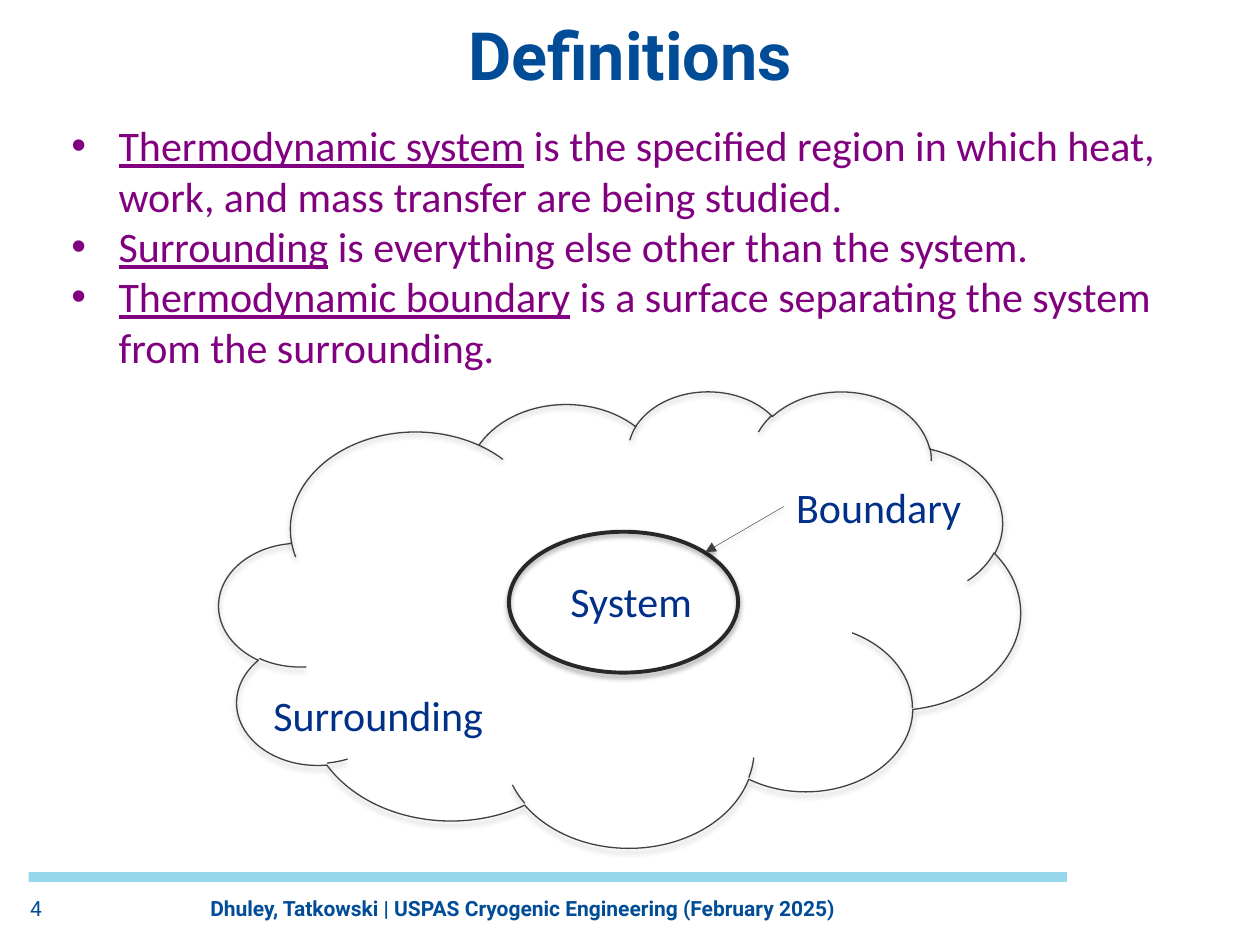
import pptx
import pptx.util
import pptx.oxml
import pptx.oxml.ns
import pptx.dml.color
import pptx.enum.text
import pptx.enum.shapes

Cm = pptx.util.Cm
Pt = pptx.util.Pt
kinds = pptx.enum.shapes.MSO_SHAPE
sides = pptx.enum.text.PP_ALIGN
rests = pptx.enum.text.MSO_ANCHOR
space = pptx.oxml.ns.nsdecls("a")


def hue(code):
    return pptx.dml.color.RGBColor.from_string(code)


def text(box, paras, font="Calibri", size=24, color="003087", bold=False,
         side=sides.LEFT, rest=rests.TOP, inset=True, wrap=True, dots=False):
    """Add a text box; each paragraph is a list of (words, underlined) runs."""
    frame = slide.shapes.add_textbox(*[Cm(n) for n in box]).text_frame
    frame.word_wrap = wrap
    frame.vertical_anchor = rest
    if not inset:
        frame.margin_left = frame.margin_right = 0
        frame.margin_top = frame.margin_bottom = 0
    for i, runs in enumerate(paras):
        para = frame.add_paragraph() if i else frame.paragraphs[0]
        para.alignment = side
        if dots:
            props = para._p.get_or_add_pPr()
            props.set("marL", str(Cm(0.95)))
            props.set("indent", str(-Cm(0.95)))
            props.append(pptx.oxml.parse_xml(f'<a:buFont {space} typeface="Arial"/>'))
            props.append(pptx.oxml.parse_xml(f'<a:buChar {space} char="•"/>'))
        for words, under in runs:
            run = para.add_run()
            run.text = words
            run.font.name = font
            run.font.size = Pt(size)
            run.font.bold = bold
            run.font.underline = under
            run.font.color.rgb = hue(color)


deck = pptx.Presentation()
deck.slide_width = Cm(25.4)
deck.slide_height = Cm(19.05)
slide = deck.slides.add_slide(deck.slide_layouts[6])

# Title and footer
bar = slide.shapes.add_shape(kinds.RECTANGLE, Cm(0.58), Cm(17.58), Cm(20.93), Cm(0.2))
bar.shadow.inherit = False
bar.fill.solid()
bar.fill.fore_color.rgb = hue("97D7EB")
bar.line.fill.background()

brand = {"font": "Roboto", "color": "004C97", "inset": False}
text((0.64, 0.71, 24.13, 1.19), [[("Definitions", False)]], size=38, bold=True,
     side=sides.CENTER, rest=rests.BOTTOM, **brand)
text((0.61, 18.06, 1.14, 0.66), [[("4", False)]], size=12, **brand)
text((4.24, 18.06, 17.4, 0.69),
     [[("Dhuley, Tatkowski | USPAS Cryogenic Engineering (February 2025)", False)]],
     size=12, bold=True, **brand)

# Definitions
terms = [
    ("Thermodynamic system",
     " is the specified region in which heat, work, and mass transfer are being studied."),
    ("Surrounding", " is everything else other than the system."),
    ("Thermodynamic boundary", " is a surface separating the system from the surrounding."),
]
text((1.19, 2.29, 23.16, 5.38), [[(term, True), (gloss, False)] for term, gloss in terms],
     color="800080", dots=True)

# System inside its surrounding
oval = slide.shapes.add_shape(kinds.OVAL, Cm(10.26), Cm(10.72), Cm(4.62), Cm(2.84))
cloud = slide.shapes.add_shape(kinds.CLOUD, Cm(4.42), Cm(7.87), Cm(16.15), Cm(9.2))
for shape in (oval, cloud):
    shape.fill.background()

for word, left, top, width in [("System", 11.25, 11.48, 2.97),
                               ("Surrounding", 5.26, 13.77, 4.78),
                               ("Boundary", 15.8, 9.58, 3.89)]:
    text((left, top, width, 1.27), [[(word, False)]], wrap=False)

arrow = slide.shapes.add_connector(pptx.enum.shapes.MSO_CONNECTOR.STRAIGHT,
                                   Cm(15.8), Cm(10.21), Cm(14.22), Cm(11.13))

for shape, color, width, dist, alpha in [(oval, "282828", 2.25, 1.8, 35),
                                         (cloud, "404040", 0.75, 1.8, 35),
                                         (arrow, "404040", 0.25, 1.6, 38)]:
    shape.line.color.rgb = hue(color)
    shape.line.width = Pt(width)
    shape._element.spPr.append(pptx.oxml.parse_xml(
        f'<a:effectLst {space}><a:outerShdw blurRad="{Pt(3.1)}" dist="{Pt(dist)}" '
        f'dir="5400000" rotWithShape="0"><a:srgbClr val="000000">'
        f'<a:alpha val="{alpha * 1000}"/></a:srgbClr></a:outerShdw></a:effectLst>'))
arrow.line._get_or_add_ln().append(
    pptx.oxml.parse_xml(f'<a:tailEnd {space} type="triangle"/>'))

deck.save("out.pptx")
